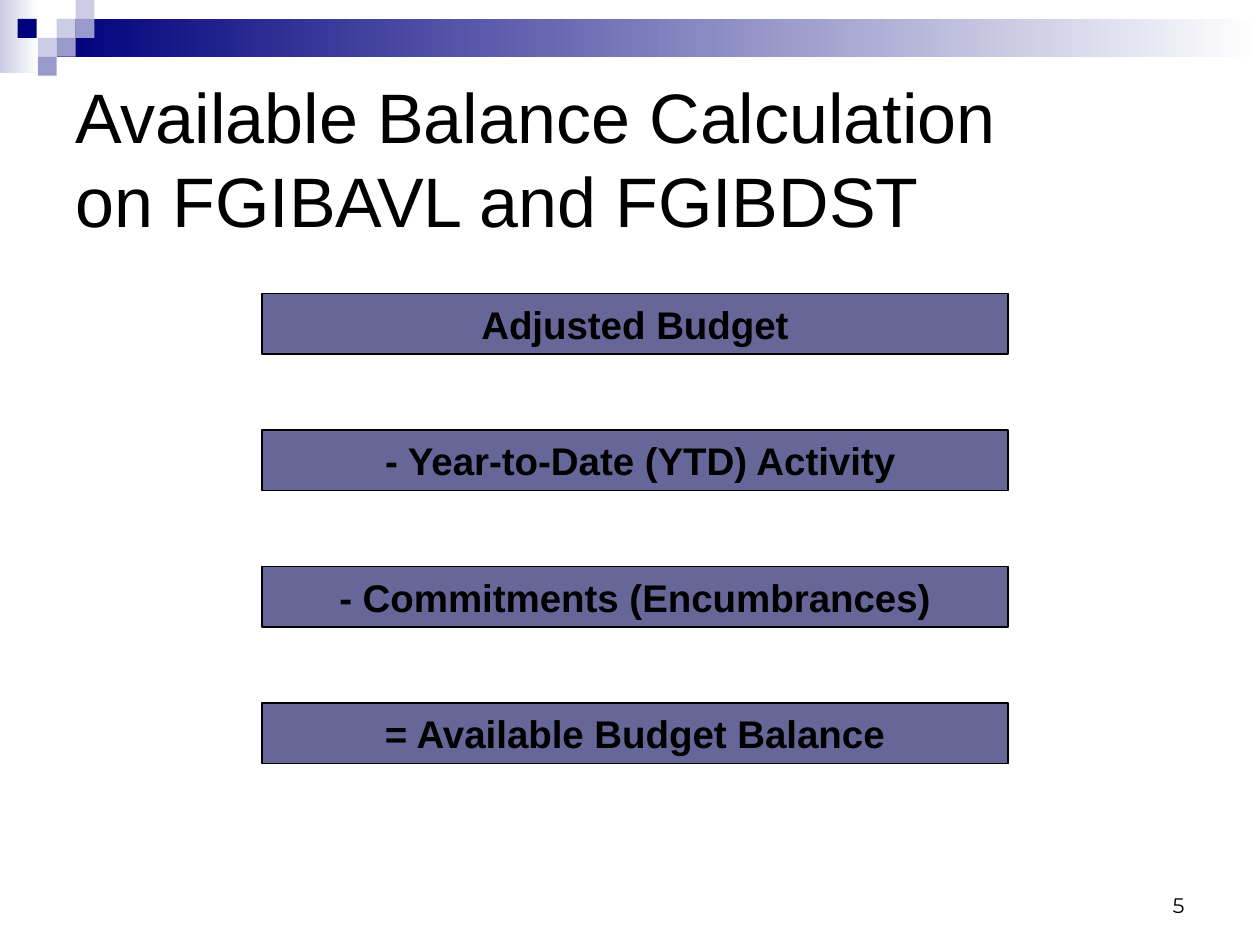
"""Builds the slide on how the available balance is calculated."""
from pptx import Presentation
from pptx.dml.color import RGBColor
from pptx.enum.shapes import MSO_SHAPE
from pptx.enum.text import MSO_ANCHOR, PP_ALIGN
from pptx.util import Inches, Pt

BLACK = RGBColor(0x00, 0x00, 0x00)
WHITE = RGBColor(0xFF, 0xFF, 0xFF)
NAVY = RGBColor(0x00, 0x00, 0x7D)
PALE = RGBColor(0xCC, 0xCC, 0xE6)
LILAC = RGBColor(0x99, 0x99, 0xCC)
SLATE = RGBColor(0x66, 0x66, 0x99)

TILE = 0.15
TILES = [
    (0.45, 0.15, PALE),
    (0.6, 0, PALE),
    (0.6, 0.15, LILAC),
    (0.3, 0.3, PALE),
    (0.14, 0.15, NAVY),
    (0.45, 0.3, LILAC),
    (0.3, 0.45, LILAC),
]
STEPS = [
    "Adjusted Budget",
    " - Year-to-Date (YTD) Activity",
    "- Commitments (Encumbrances)",
    "= Available Budget Balance",
]


def add_rect(slide, x, y, w, h):
    shape = slide.shapes.add_shape(
        MSO_SHAPE.RECTANGLE, Inches(x), Inches(y), Inches(w), Inches(h))
    shape.shadow.inherit = False
    shape.line.fill.background()
    return shape


def add_tile(slide, x, y, color):
    tile = add_rect(slide, x, y, TILE, TILE)
    tile.fill.solid()
    tile.fill.fore_color.rgb = color


def add_fade(slide, x, y, w, h, color):
    fill = add_rect(slide, x, y, w, h).fill
    fill.gradient()
    fill.gradient_angle = 0
    for stop, pos, tone in zip(fill.gradient_stops, (0, 1), (color, WHITE)):
        stop.position = pos
        stop.color.rgb = tone


def set_text(shape, text, size, align, anchor, face="Arial", bold=False):
    frame = shape.text_frame
    frame.word_wrap = True
    frame.vertical_anchor = anchor
    frame.text = text
    para = frame.paragraphs[0]
    para.alignment = align
    font = para.font
    font.name = face
    font.size = Pt(size)
    font.bold = bold
    font.color.rgb = BLACK


def add_label(slide, x, y, w, h, *style):
    box = slide.shapes.add_textbox(Inches(x), Inches(y), Inches(w), Inches(h))
    set_text(box, *style)


def add_step(slide, y, text):
    bar = add_rect(slide, 2.08, y, 5.92, 0.48)
    bar.fill.solid()
    bar.fill.fore_color.rgb = SLATE
    bar.line.color.rgb = BLACK
    bar.line.width = Pt(1)
    set_text(bar, text, 22, PP_ALIGN.CENTER, MSO_ANCHOR.MIDDLE, bold=True)


def main():
    deck = Presentation()
    deck.slide_width = Inches(10)
    deck.slide_height = Inches(7.5)
    slide = deck.slides.add_slide(deck.slide_layouts[6])
    add_fade(slide, 0, 0, 0.31, 0.58, PALE)
    add_fade(slide, 0.45, 0.15, 9.55, 0.3, NAVY)
    for x, y, color in TILES:
        add_tile(slide, x, y, color)
    add_label(slide, 7.17, 6.83, 2.33, 0.5, "5", 12,
              PP_ALIGN.RIGHT, MSO_ANCHOR.BOTTOM, "Montserrat")
    add_label(slide, 0.5, 0.5, 9, 1.5,
              "Available Balance Calculation\von FGIBAVL and FGIBDST", 40,
              PP_ALIGN.LEFT, MSO_ANCHOR.MIDDLE)
    for i, text in enumerate(STEPS):
        add_step(slide, 2.33 + i * 3.25 / 3, text)
    deck.save("out.pptx")


if __name__ == "__main__":
    main()
